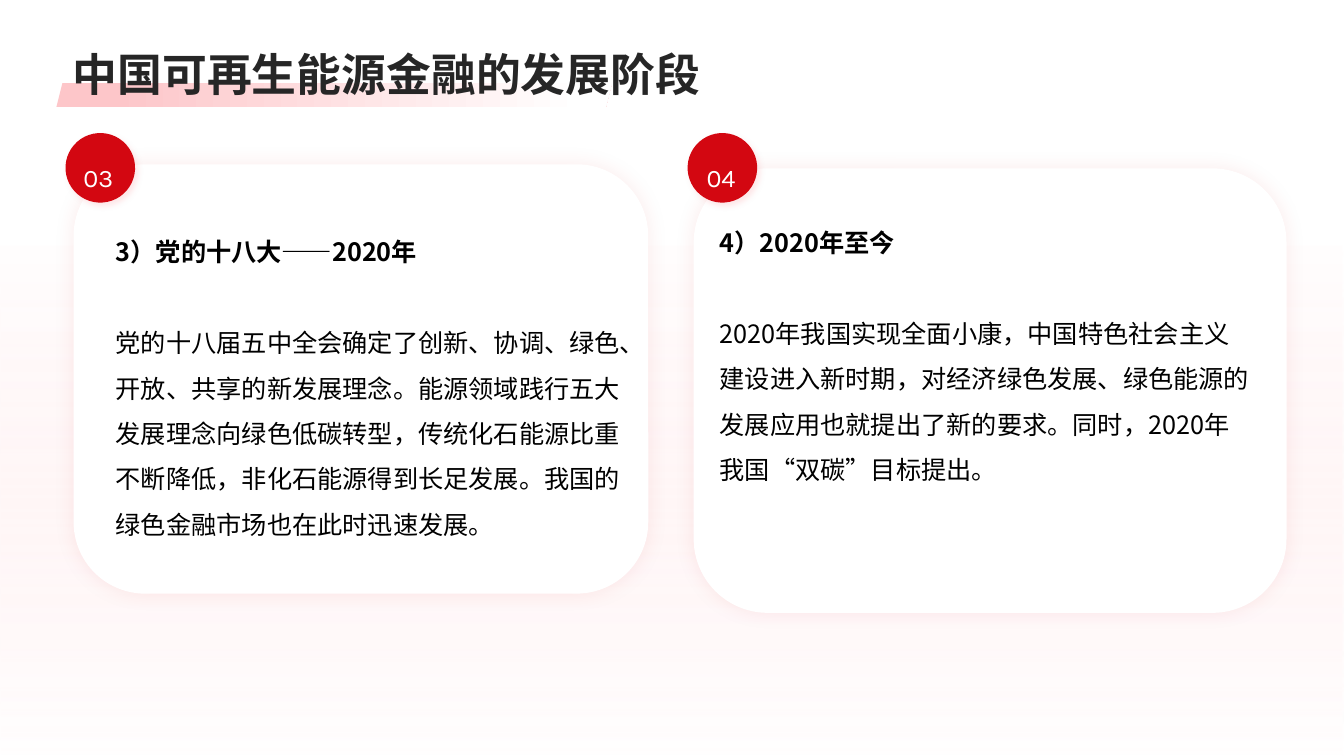
from lxml.etree import SubElement
from pptx import Presentation
from pptx.dml.color import RGBColor
from pptx.enum.shapes import MSO_SHAPE
from pptx.enum.text import MSO_ANCHOR
from pptx.oxml.ns import qn
from pptx.util import Inches, Pt

RED, PINK, WHITE, BLACK, DARK = "D30711", "FDC6C9", "FFFFFF", "000000", "262626"
CJK, LATIN = "Noto Sans CJK SC", "Karla"
TITLE = "中国可再生能源金融的发展阶段"
STAGES = [
    {
        "number": "03",
        "heading": "3）党的十八大——2020年",
        "body": "党的十八届五中全会确定了创新、协调、绿色、开放、共享的新发展理念。"
                "能源领域践行五大发展理念向绿色低碳转型，传统化石能源比重不断降低，"
                "非化石能源得到长足发展。我国的绿色金融市场也在此时迅速发展。",
        "card": (0.73, 1.63, 5.7, 4.26),
        "text": (1.05, 2.15, 5.38, 4.14),
        "badge": (0.65, 1.32, 0.69, 0.69),
        "label": (0.73, 1.41, 1.27, 0.52),
    },
    {
        "number": "04",
        "heading": "4）2020年至今",
        "body": "2020年我国实现全面小康，中国特色社会主义建设进入新时期，"
                "对经济绿色发展、绿色能源的发展应用也就提出了新的要求。"
                "同时，2020年我国“双碳”目标提出。",
        "card": (6.88, 1.67, 5.88, 4.41),
        "text": (7.04, 2.06, 5.49, 3.21),
        "badge": (6.82, 1.32, 0.69, 0.69),
        "label": (6.91, 1.41, 1.27, 0.52),
    },
]
CARD_SHADOW = (RED, 8, 15, 0, 0)
BADGE_SHADOW = (PINK, 40, 4, 3, 45)


def color(value):
    return RGBColor.from_string(value)


def add_color(parent, value, opacity):
    tint = SubElement(parent, qn("a:srgbClr"), val=value)
    SubElement(tint, qn("a:alpha"), val=str(opacity * 1000))


def add_panel(page, kind, place, fill=None):
    panel = page.shapes.add_shape(kind, *map(Inches, place))
    panel.shadow.inherit = False
    panel.line.fill.background()
    if fill:
        panel.fill.solid()
        panel.fill.fore_color.rgb = color(fill)
    return panel


def add_gradient(panel, stops, angle):
    panel.fill.gradient()
    gradient = panel._element.spPr.find(qn("a:gradFill"))
    for child in list(gradient):
        gradient.remove(child)
    stop_list = SubElement(gradient, qn("a:gsLst"))
    for position, value, opacity in stops:
        stop = SubElement(stop_list, qn("a:gs"), pos=str(position * 1000))
        add_color(stop, value, opacity)
    SubElement(gradient, qn("a:lin"), ang=str(angle * 60000), scaled="0")


def add_shadow(panel, value, opacity, blur, distance, angle):
    effects = panel._element.spPr.find(qn("a:effectLst"))
    shadow = SubElement(effects, qn("a:outerShdw"), blurRad=str(Pt(blur)), dist=str(Pt(distance)),
                        dir=str(angle * 60000), algn="ctr", rotWithShape="0")
    add_color(shadow, value, opacity)


def add_text(page, place, lines, size, face, ink, spacing=1.5, gap=0):
    box = page.shapes.add_textbox(*map(Inches, place))
    frame = box.text_frame
    frame.word_wrap = True
    for index, (text, bold) in enumerate(lines):
        para = frame.add_paragraph() if index else frame.paragraphs[0]
        para.text = text
        para.line_spacing = spacing
        if index:
            para.space_before = Pt(gap)
        font = para.font
        font.size, font.bold, font.name = Pt(size), bold, face
        font.color.rgb = color(ink)
        SubElement(font._element, qn("a:ea"), typeface=face)
    return frame


def add_stage(page, stage):
    card = add_panel(page, MSO_SHAPE.ROUNDED_RECTANGLE, stage["card"], WHITE)
    add_shadow(card, *CARD_SHADOW)
    lines = [(stage["heading"], True), (stage["body"], False)]
    add_text(page, stage["text"], lines, 18, CJK, BLACK, gap=32.4)
    badge = add_panel(page, MSO_SHAPE.FLOWCHART_CONNECTOR, stage["badge"], RED)
    badge.rotation = 310.8
    add_shadow(badge, *BADGE_SHADOW)
    add_text(page, stage["label"], [(stage["number"], False)], 18, LATIN, WHITE)


def add_title(page):
    underline = add_panel(page, MSO_SHAPE.PARALLELOGRAM, (0.56, 0.82, 5.51, 0.24))
    add_gradient(underline, [(10, PINK, 100), (95, WHITE, 100)], 0)
    frame = add_text(page, (0.72, 0.47, 11.88, 0.47), [(TITLE, True)], 32, CJK, DARK, 1.1)
    frame.vertical_anchor = MSO_ANCHOR.MIDDLE
    frame.margin_left = frame.margin_right = frame.margin_top = frame.margin_bottom = 0


def main():
    deck = Presentation()
    deck.slide_width, deck.slide_height = Inches(13.33), Inches(7.5)
    page = deck.slides.add_slide(deck.slide_layouts[6])
    backdrop = add_panel(page, MSO_SHAPE.RECTANGLE, (0, 0, 13.33, 7.5))
    add_gradient(backdrop, [(0, PINK, 0), (68, WHITE, 57)], 270)
    for stage in STAGES:
        add_stage(page, stage)
    add_title(page)
    deck.save("out.pptx")


if __name__ == "__main__":
    main()
